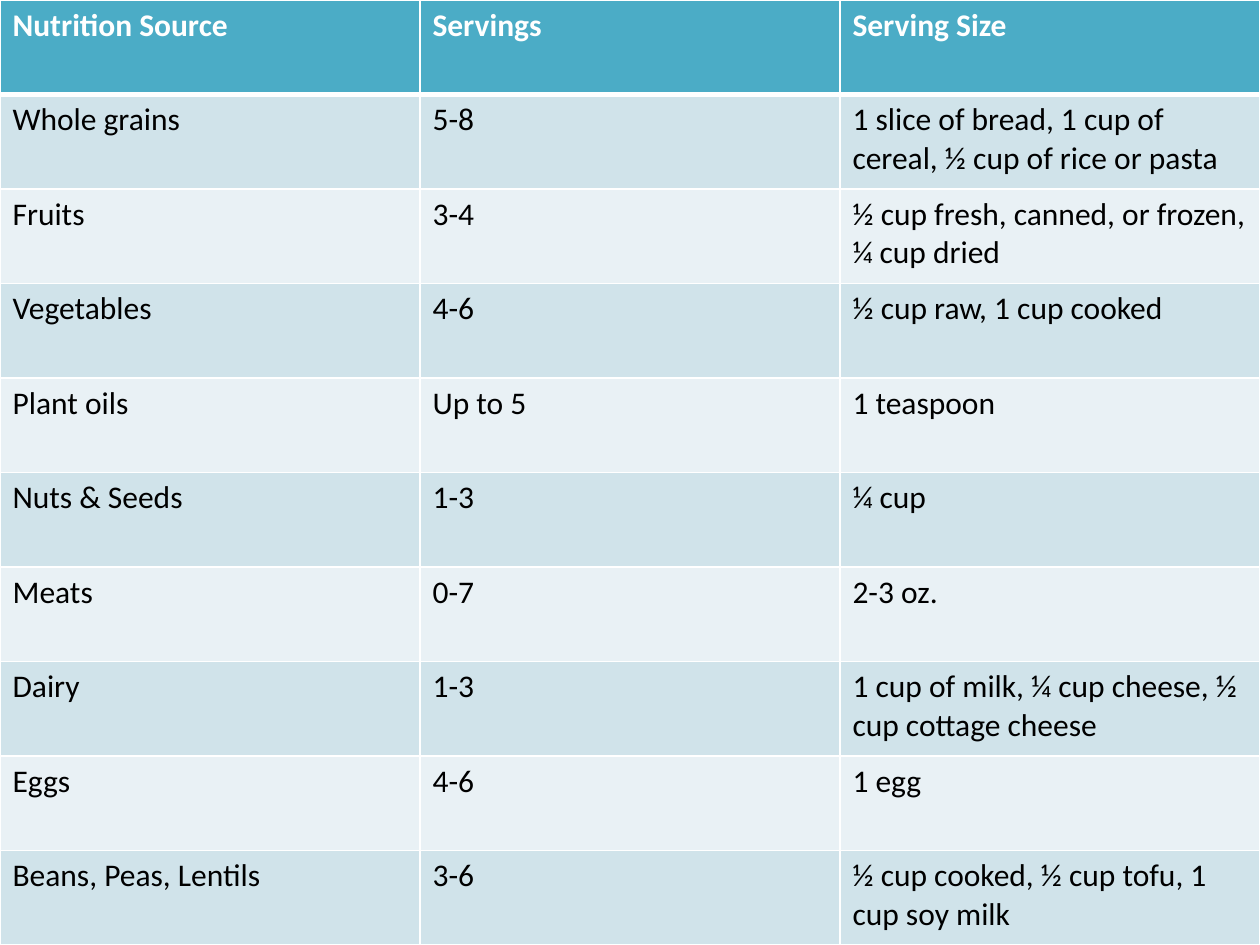
from dataclasses import dataclass

from lxml import etree
from pptx import Presentation
from pptx.dml.color import RGBColor
from pptx.oxml.ns import qn
from pptx.util import Cm, Pt

BLANK = 6
WIDTH, HEIGHT = Cm(25.4), Cm(19.05)


@dataclass(frozen=True)
class Theme:
    font: str = "Calibri"
    size: int = 18
    head: str = "4BACC6"
    bands: tuple = ("D0E3EA", "E9F1F5")
    light: str = "FFFFFF"
    dark: str = "000000"
    thin: int = 1
    thick: int = 3


THEME = Theme()

ROWS = [
    ("Nutrition Source", "Servings", "Serving Size"),
    ("Whole grains", "5-8",
     "1 slice of bread, 1 cup of cereal, ½ cup of rice or pasta"),
    ("Fruits", "3-4", "½ cup fresh, canned, or frozen, ¼ cup dried"),
    ("Vegetables", "4-6", "½ cup raw, 1 cup cooked"),
    ("Plant oils", "Up to 5", "1 teaspoon"),
    ("Nuts & Seeds", "1-3", "¼ cup"),
    ("Meats", "0-7", "2-3 oz."),
    ("Dairy", "1-3", "1 cup of milk, ¼ cup cheese, ½ cup cottage cheese"),
    ("Eggs", "4-6", "1 egg"),
    ("Beans, Peas, Lentils", "3-6", "½ cup cooked, ½ cup tofu, 1 cup soy milk"),
]


def add_edge(cell, side, width):
    props = cell._tc.get_or_add_tcPr()
    line = etree.SubElement(props, qn(f"a:ln{side}"), w=str(Pt(width)))
    fill = etree.SubElement(line, qn("a:solidFill"))
    etree.SubElement(fill, qn("a:srgbClr"), val=THEME.light)


def fill_cell(cell, text, row):
    is_head = row == 0
    edges = {
        "L": THEME.thin,
        "R": THEME.thin,
        "T": THEME.thick if row == 1 else THEME.thin,
        "B": THEME.thick if is_head else THEME.thin,
    }
    for side, width in edges.items():
        add_edge(cell, side, width)
    back = THEME.head if is_head else THEME.bands[(row - 1) % 2]
    cell.fill.solid()
    cell.fill.fore_color.rgb = RGBColor.from_string(back)

    cell.text = text
    font = cell.text_frame.paragraphs[0].runs[0].font
    style = {"name": THEME.font, "size": Pt(THEME.size), "bold": is_head}
    for name, value in style.items():
        setattr(font, name, value)
    ink = THEME.light if is_head else THEME.dark
    font.color.rgb = RGBColor.from_string(ink)


def add_grid(slide, rows):
    frame = slide.shapes.add_table(
        len(rows), len(rows[0]), Cm(0), Cm(0), WIDTH, HEIGHT)
    table = frame.table
    for r, texts in enumerate(rows):
        for c, text in enumerate(texts):
            fill_cell(table.cell(r, c), text, r)


def main():
    deck = Presentation()
    deck.slide_width, deck.slide_height = WIDTH, HEIGHT
    slide = deck.slides.add_slide(deck.slide_layouts[BLANK])
    add_grid(slide, ROWS)
    deck.save("out.pptx")


if __name__ == "__main__":
    main()
